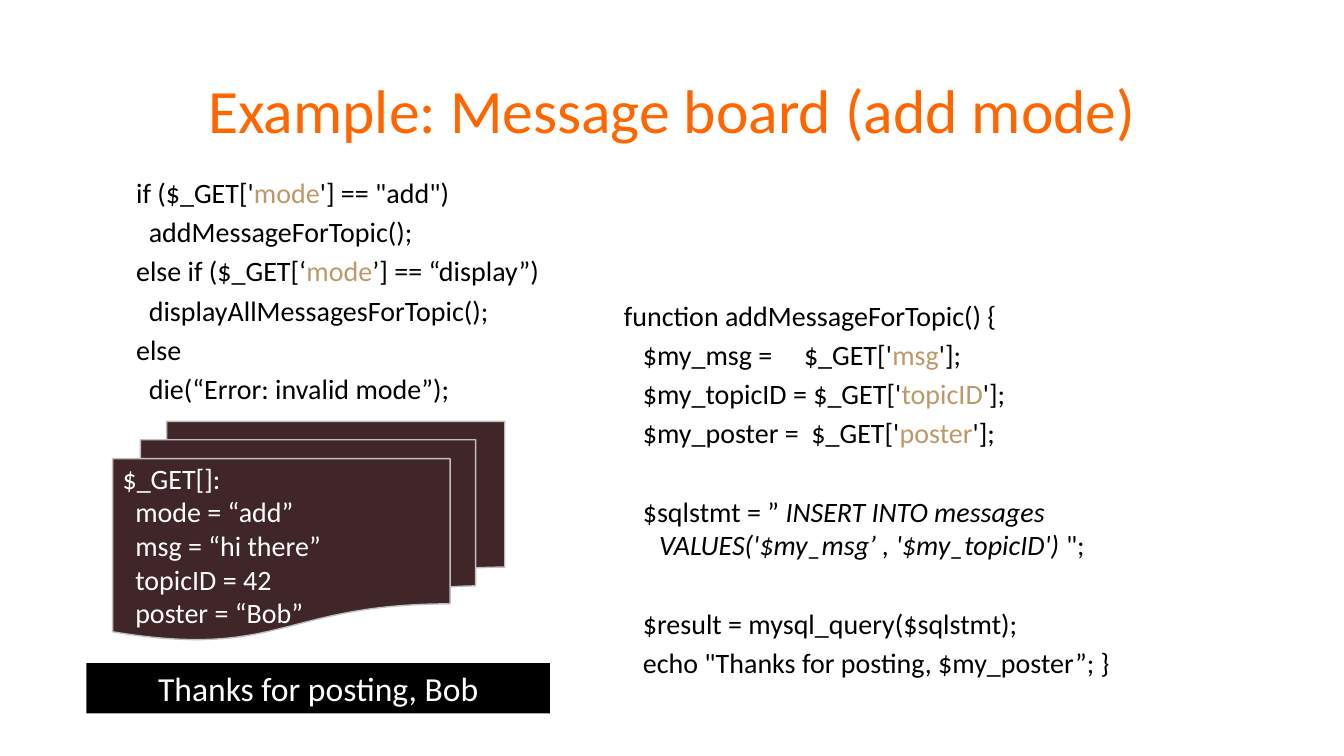
from lxml import etree
from pptx import Presentation
from pptx.dml.color import RGBColor
from pptx.enum.shapes import MSO_SHAPE
from pptx.enum.text import MSO_ANCHOR, MSO_AUTO_SIZE, PP_ALIGN
from pptx.oxml.ns import qn
from pptx.util import Cm, Pt

DOCUMENTS, RECTANGLE = MSO_SHAPE.FLOWCHART_MULTIDOCUMENT, MSO_SHAPE.RECTANGLE
MIDDLE, TOP = MSO_ANCHOR.MIDDLE, MSO_ANCHOR.TOP
CENTER, LEFT = PP_ALIGN.CENTER, PP_ALIGN.LEFT
NO_FIT = MSO_AUTO_SIZE.NONE

FONT = "Calibri"
ORANGE, TAN, BLACK, WHITE = "FF6600", "BD9969", "000000", "FFFFFF"
BROWN, SILVER = "402529", "C0C0C0"
TWO_CONTENT = 3
STEP = 0.16  # one column of code indentation, in cm
LINE_GAP, BLOCK_GAP = 4, 32  # space before a line and before a new block, in points

# Code lines: indentation columns, space before, spans of (text, style)
MODE_CODE = [
    (0, LINE_GAP, [("if ($_GET['", ""), ("mode", "key"), ("'] == \"add\")", "")]),
    (2, LINE_GAP, [("addMessageForTopic();", "")]),
    (0, LINE_GAP, [("else if ($_GET[‘", ""), ("mode", "key"), ("’] == “display”)", "")]),
    (2, LINE_GAP, [("displayAllMessagesForTopic();", "")]),
    (0, LINE_GAP, [("else", "")]),
    (2, LINE_GAP, [("die(“Error: invalid mode”);", "")]),
]
ADD_CODE = [
    (0, LINE_GAP, [("function addMessageForTopic() {", "")]),
    (3, LINE_GAP, [("$my_msg =     $_GET['", ""), ("msg", "key"), ("'];", "")]),
    (3, LINE_GAP, [("$my_topicID = $_GET['", ""), ("topicID", "key"), ("'];", "")]),
    (3, LINE_GAP, [("$my_poster =  $_GET['", ""), ("poster", "key"), ("'];", "")]),
    (3, BLOCK_GAP, [("$sqlstmt = ” ", ""),
                    ("INSERT INTO messages VALUES('$my_msg’ , '$my_topicID') ", "sql"),
                    ("\";", "")]),
    (3, BLOCK_GAP, [("$result = mysql_query($sqlstmt);", "")]),
    (3, LINE_GAP, [("echo \"Thanks for posting, $my_poster”; }", "")]),
]
REQUEST = [(0, "$_GET[]:"), (2, "mode = “add”"), (2, "msg = “hi there”"),
           (2, "topicID = 42"), (2, "poster = “Bob”")]


def color(value):
    return RGBColor.from_string(value)


def place(shape, left, top, width, height):
    shape.left, shape.top = Cm(left), Cm(top)
    shape.width, shape.height = Cm(width), Cm(height)


def set_font(font, size, value):
    font.name, font.size = FONT, Pt(size)
    font.color.rgb = color(value)


def set_indent(para, margin, first_line):
    properties = para._p.get_or_add_pPr()
    properties.set("marL", str(Cm(margin)))
    properties.set("indent", str(Cm(first_line)))
    return properties


def fill_title(title, text):
    place(title, 2.34, 1.02, 29.21, 3.68)
    frame = title.text_frame
    frame.text = text
    frame.auto_size, frame.vertical_anchor = NO_FIT, MIDDLE
    para = frame.paragraphs[0]
    para.alignment, para.line_spacing = CENTER, 0.9
    set_font(para.font, 44, ORANGE)


def fill_code(body, position, lines):
    place(body, *position)
    frame = body.text_frame
    frame.auto_size, frame.vertical_anchor, frame.word_wrap = NO_FIT, TOP, True
    frame.margin_left, frame.margin_top = Cm(0.15), Cm(0.25)
    frame.margin_right, frame.margin_bottom = Cm(0.8), Cm(0.13)
    for number, (columns, gap, spans) in enumerate(lines):
        para = frame.add_paragraph() if number else frame.paragraphs[0]
        para.alignment, para.space_before = LEFT, Pt(gap)
        properties = set_indent(para, 1.22, -0.89 + columns * STEP)
        etree.SubElement(properties, qn("a:buNone"))
        set_font(para.font, 20, BLACK)
        for text, style in spans:
            span = para.add_run()
            span.text = text
            if style == "key":
                span.font.color.rgb = color(TAN)
            elif style == "sql":
                span.font.italic = True


def add_panel(slide, kind, position, fill, line, lines, size, alignment):
    panel = slide.shapes.add_shape(kind, 0, 0, 0, 0)
    place(panel, *position)
    panel.shadow.inherit = False
    panel.fill.solid()
    panel.fill.fore_color.rgb = color(fill)
    if line:
        panel.line.color.rgb = color(line)
        panel.line.width = Pt(1)
    else:
        panel.line.fill.background()
    frame = panel.text_frame
    frame.vertical_anchor = MIDDLE
    for number, (columns, text) in enumerate(lines):
        para = frame.add_paragraph() if number else frame.paragraphs[0]
        para.text, para.alignment = text, alignment
        set_indent(para, columns * STEP, 0)
        set_font(para.font, size, WHITE)


def main():
    deck = Presentation()
    deck.slide_width, deck.slide_height = Cm(33.87), Cm(19.05)
    slide = deck.slides.add_slide(deck.slide_layouts[TWO_CONTENT])

    # Title and the two code listings
    title, mode_body, add_body = slide.placeholders
    fill_title(title, "Example: Message board (add mode)")
    fill_code(mode_body, (2.95, 4.17, 14.68, 6.99), MODE_CODE)
    fill_code(add_body, (15.24, 7.26, 16.94, 10.59), ADD_CODE)

    # Request values and the resulting page
    add_panel(slide, DOCUMENTS, (2.84, 10.62, 9.88, 5.51), BROWN, SILVER,
              REQUEST, 20, LEFT)
    add_panel(slide, RECTANGLE, (2.18, 16.71, 11.68, 1.27), BLACK, None,
              [(0, "Thanks for posting, Bob")], 24, CENTER)

    deck.save("out.pptx")


if __name__ == "__main__":
    main()
